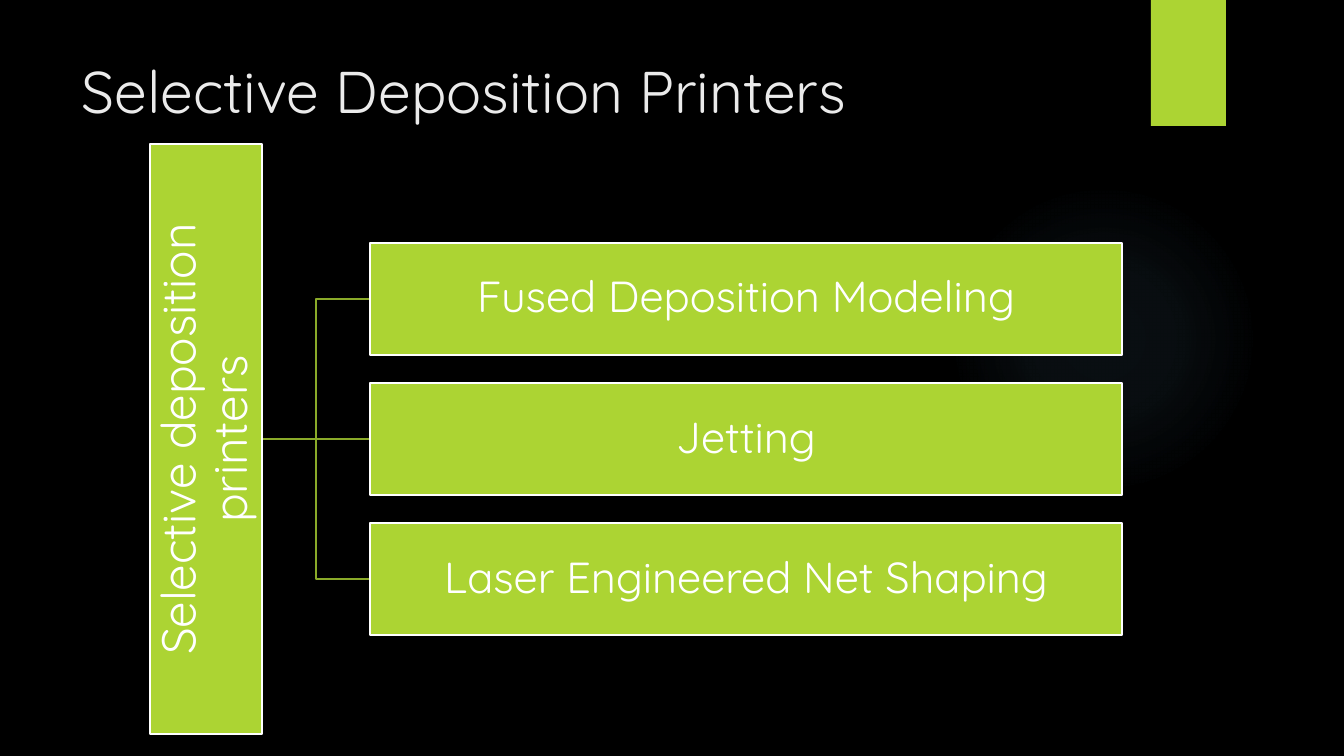
import pptx
import pptx.util
import pptx.oxml
import pptx.dml.color
import pptx.enum.shapes
import pptx.enum.text

RGB = pptx.dml.color.RGBColor
BLACK = RGB(0x00, 0x00, 0x00)
WHITE = RGB(0xFF, 0xFF, 0xFF)
TITLE_GREY = RGB(0xEB, 0xEB, 0xEB)
GREEN = RGB(0xAC, 0xD4, 0x33)
DARK_GREEN = RGB(0x8A, 0xAA, 0x29)
GLOW_BLUE = RGB(0x7A, 0xC4, 0xF0)

FONT = "Quicksand"
SCALE = 914400 / 100.8
SHAPE = pptx.enum.shapes.MSO_SHAPE
ANCHOR = pptx.enum.text.MSO_ANCHOR
ALIGN = pptx.enum.text.PP_ALIGN
DRAWING_NS = "http://schemas.openxmlformats.org/drawingml/2006/main"

ROOT_TEXT = "Selective deposition printers"
BRANCHES = ["Fused Deposition Modeling", "Jetting", "Laser Engineered Net Shaping"]


def px(n):
    return pptx.util.Emu(round(n * SCALE))


def add_block(slide, shape_type, x, y, w, h, fill=GREEN):
    sp = slide.shapes.add_shape(shape_type, px(x), px(y), px(w), px(h))
    sp.shadow.inherit = False
    sp.fill.solid()
    sp.fill.fore_color.rgb = fill
    sp.line.fill.background()
    return sp


def set_text(sp, text, size, color, align, anchor):
    tf = sp.text_frame
    tf.word_wrap = True
    tf.vertical_anchor = anchor
    p = tf.paragraphs[0]
    p.text = text
    p.alignment = align
    font = p.runs[0].font
    font.name, font.size, font.color.rgb = FONT, pptx.util.Pt(size), color


def add_node(slide, text, size, x, y, w, h, rotation=0):
    sp = add_block(slide, SHAPE.RECTANGLE, x, y, w, h)
    sp.rotation = rotation
    sp.line.color.rgb = WHITE
    sp.line.width = pptx.util.Pt(1.5)
    set_text(sp, text, size, WHITE, ALIGN.CENTER, ANCHOR.MIDDLE)
    tf = sp.text_frame
    tf.margin_left = tf.margin_right = tf.margin_top = tf.margin_bottom = px(2)
    tf.paragraphs[0].line_spacing = 0.9


def add_branch_line(slide, points):
    start, *rest = points
    builder = slide.shapes.build_freeform(*start, scale=SCALE)
    builder.add_line_segments(rest, close=False)
    sp = builder.convert_to_shape()
    sp.shadow.inherit = False
    sp.fill.background()
    sp.line.color.rgb = DARK_GREEN
    sp.line.width = pptx.util.Pt(1.5)


def draw_backdrop(slide):
    slide.background.fill.solid()
    slide.background.fill.fore_color.rgb = BLACK

    # Faint round glow
    glow = add_block(slide, SHAPE.OVAL, 949, 184, 310, 310, GLOW_BLUE)
    stops = "".join(
        f'<a:gs pos="{pos * 1000}"><a:srgbClr val="{GLOW_BLUE}">'
        f'<a:alpha val="{alpha * 1000}"/></a:srgbClr></a:gs>'
        for pos, alpha in [(0, 7), (36, 6), (69, 0)])
    gradient = pptx.oxml.parse_xml(
        f'<a:gradFill xmlns:a="{DRAWING_NS}" rotWithShape="1"><a:gsLst>{stops}</a:gsLst>'
        '<a:path path="circle"><a:fillToRect l="50000" t="50000" r="50000" b="50000"/>'
        '</a:path></a:gradFill>')
    solid = glow._element.spPr.find(f"{{{DRAWING_NS}}}solidFill")
    solid.getparent().replace(solid, gradient)

    # Corner tab
    add_block(slide, SHAPE.RECTANGLE, 1151, 0, 75, 126)


def draw_title(slide, x, y, w, h):
    sp = slide.shapes.add_textbox(px(x), px(y), px(w), px(h))
    set_text(sp, "Selective Deposition Printers", 42, TITLE_GREY, ALIGN.LEFT, ANCHOR.TOP)


def draw_hierarchy(slide, x, y, w, h):
    node_h, gap, link_w = 112, 28, 108
    branch_x = x + node_h + link_w
    center_y = y + h // 2
    pitch = node_h + gap
    first_y = center_y - pitch * (len(BRANCHES) - 1) // 2
    centers = [first_y + i * pitch for i in range(len(BRANCHES))]

    # Lines from the root to each branch
    root_x, bend_x = x + node_h, x + node_h + link_w // 2
    for cy in centers:
        bend = [] if cy == center_y else [(bend_x, center_y), (bend_x, cy)]
        add_branch_line(slide, [(root_x, center_y), *bend, (branch_x, cy)])

    # Root, turned to read upwards
    add_node(slide, ROOT_TEXT, 34, x + (node_h - h) // 2, center_y - node_h // 2,
             h, node_h, rotation=270)

    # Branches
    for text, cy in zip(BRANCHES, centers):
        add_node(slide, text, 31, branch_x, cy - node_h // 2, x + w - branch_x, node_h)


def main():
    prs = pptx.Presentation()
    prs.slide_width, prs.slide_height = px(1344), px(756)
    slide = prs.slides.add_slide(prs.slide_layouts[6])
    draw_backdrop(slide)
    draw_title(slide, 72, 50, 1037, 154)
    draw_hierarchy(slide, 150, 144, 972, 590)
    prs.save("out.pptx")


if __name__ == "__main__":
    main()
